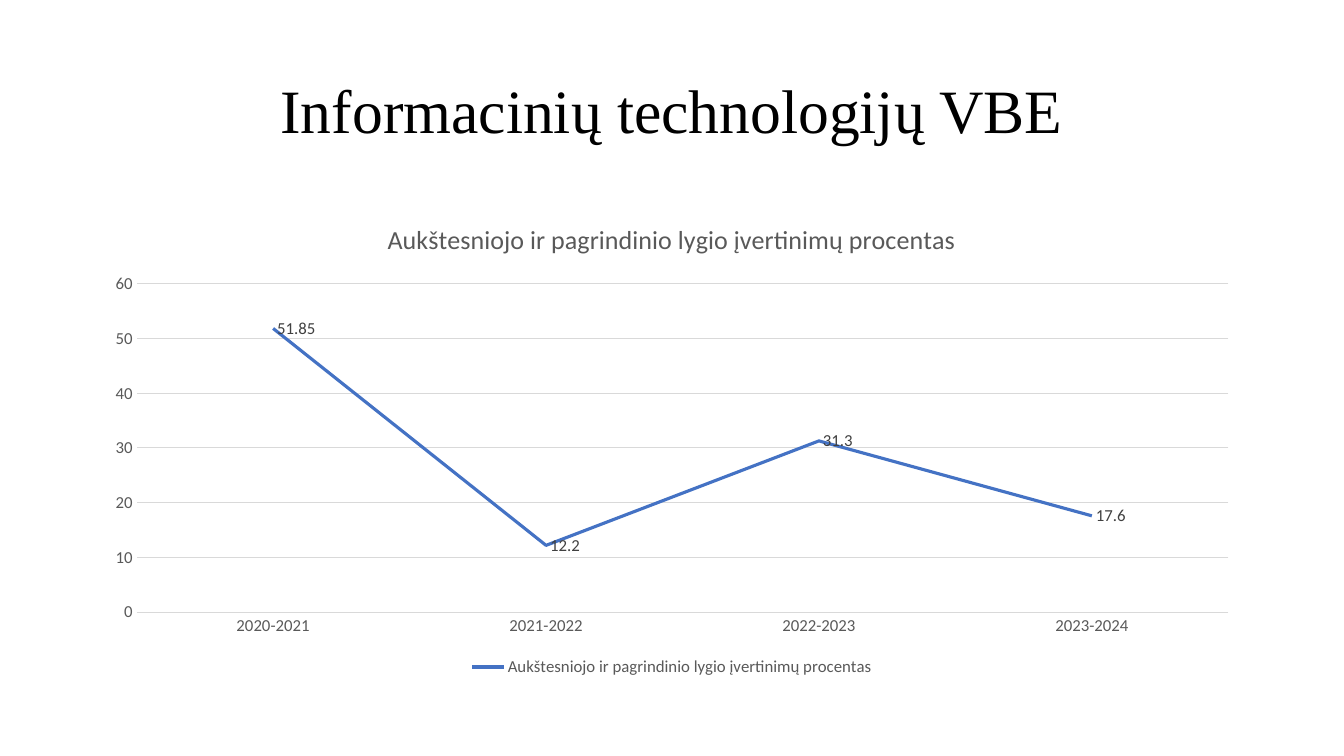
import pptx
import pptx.chart.data
import pptx.dml.color
import pptx.enum.chart
import pptx.enum.text
import pptx.util
from pptx.util import Cm

COLOURS = {
    "heading": "000000",
    "text": "595959",
    "label": "404040",
    "grid": "D9D9D9",
    "line": "4472C4",
}
MEASURE = "Aukštesniojo ir pagrindinio lygio įvertinimų procentas"
RESULTS = {
    "2020-2021": 51.85,
    "2021-2022": 12.2,
    "2022-2023": 31.3,
    "2023-2024": 17.6,
}
LEFT, WIDTH = Cm(2.33), Cm(29.21)


def rgb(name):
    return pptx.dml.color.RGBColor.from_string(COLOURS[name])


def style_font(font, size, colour, family="Calibri"):
    font.name = family
    font.size = pptx.util.Pt(size)
    font.bold = False
    font.color.rgb = rgb(colour)


def style_line(line, colour, width):
    line.color.rgb = rgb(colour)
    line.width = pptx.util.Pt(width)


def add_heading(slide, wording):
    frame = slide.shapes.add_textbox(LEFT, Cm(1.01), WIDTH, Cm(3.68)).text_frame
    frame.word_wrap = True
    frame.vertical_anchor = pptx.enum.text.MSO_ANCHOR.MIDDLE
    heading = frame.paragraphs[0]
    heading.text = wording
    heading.alignment = pptx.enum.text.PP_ALIGN.CENTER
    heading.line_spacing = 0.9
    style_font(heading.font, 44, "heading", "Times New Roman")


def style_axes(chart):
    for axis in (chart.category_axis, chart.value_axis):
        axis.major_tick_mark = pptx.enum.chart.XL_TICK_MARK.NONE
        axis.minor_tick_mark = pptx.enum.chart.XL_TICK_MARK.NONE
        style_font(axis.tick_labels.font, 12, "text")
    style_line(chart.category_axis.format.line, "grid", 0.75)
    percentages = chart.value_axis
    percentages.minimum_scale = 0
    percentages.maximum_scale = 60
    percentages.major_unit = 10
    percentages.format.line.fill.background()
    percentages.has_major_gridlines = True
    style_line(percentages.major_gridlines.format.line, "grid", 0.75)


def style_results(results):
    results.smooth = False
    results.marker.style = pptx.enum.chart.XL_MARKER_STYLE.NONE
    style_line(results.format.line, "line", 2.25)
    labels = results.data_labels
    labels.show_value = True
    labels.position = pptx.enum.chart.XL_LABEL_POSITION.RIGHT
    style_font(labels.font, 12, "label")


def add_results_chart(slide):
    data = pptx.chart.data.CategoryChartData()
    data.categories = list(RESULTS)
    data.add_series(MEASURE, list(RESULTS.values()))
    chart = slide.shapes.add_chart(
        pptx.enum.chart.XL_CHART_TYPE.LINE, LEFT, Cm(5.07), WIDTH, Cm(12.09), data
    ).chart
    style_font(chart.font, 10, "heading")
    chart.has_title = True
    title = chart.chart_title.text_frame.paragraphs[0]
    title.text = MEASURE
    style_font(title.font, 18.6, "text")
    chart.has_legend = True
    chart.legend.position = pptx.enum.chart.XL_LEGEND_POSITION.BOTTOM
    chart.legend.include_in_layout = False
    style_font(chart.legend.font, 12, "text")
    style_axes(chart)
    chart.plots[0].vary_by_categories = False
    style_results(chart.series[0])


def main():
    deck = pptx.Presentation()
    deck.slide_width = Cm(33.87)
    deck.slide_height = Cm(19.05)
    slide = deck.slides.add_slide(deck.slide_layouts[6])
    add_heading(slide, "Informacinių technologijų VBE")
    add_results_chart(slide)
    deck.save("out.pptx")


if __name__ == "__main__":
    main()
